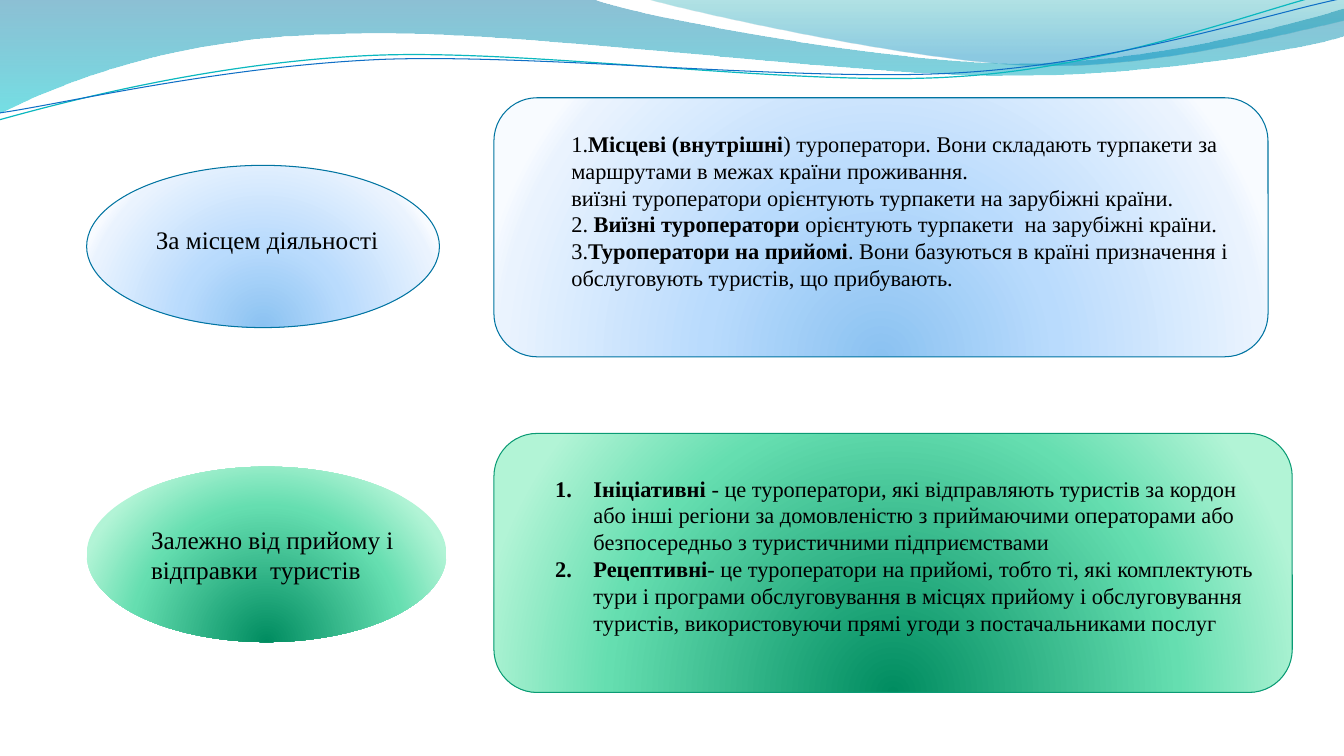
from math import cos, radians, sin

from lxml import etree
from pptx import Presentation
from pptx.dml.color import RGBColor as RGB
from pptx.enum.shapes import MSO_SHAPE as SHAPE
from pptx.enum.text import MSO_ANCHOR as ANCHOR, MSO_AUTO_SIZE as AUTO, PP_ALIGN as ALIGN
from pptx.oxml.ns import qn
from pptx.util import Emu, Pt

PX = 9144  # 100 px to the inch
SLIDE_SIZE = (Emu(12192000), Emu(6858000))

# Theme: gradient stops are (position %, colour, opacity %)
THEME = {
    "font": "Times New Roman", "text": "000000", "label": 18, "body": 16,
    "wave": [(0, "0074A1", 45), (100, "00C6CF", 55)],
    "crest": [(0, "00A1A9", 30), (80, "008BBF", 45)],
    "blue": [(0, "8BC2F1", 100), (43, "B9DBFD", 100), (93, "EAF3FE", 100), (100, "F8FBFF", 100)],
    "green": [(0, "008C60", 100), (68, "65DEB0", 100), (100, "B2F4D6", 100)],
    "teal line": ("0AB8BF", 0.85), "blue line": ("0F6FC6", 0.75),
    "blue edge": ("0074A1", 0.75), "green edge": ("0A9B74", 0.75),
}

# Header outlines: fill, edge, tilt in degrees, turning centre, steps
# (a pair is a straight step, three pairs are a Bézier step)
WAVES = [
    ("wave", None, 0, (667, 56), [
        [(-1, 0)], [(587, -1)], [(634, 17), (885, 63), (1011, 63)],
        [(1138, 63), (1278, 26), (1333, 9)], [(1335, 36)],
        [(1311, 44), (1160, 76), (994, 75)], [(829, 75), (509, 28), (343, 34)],
        [(172, 36), (61, 83), (-1, 113)]]),
    ("crest", None, 0, (986, 34), [
        [(639, -1)], [(679, 11), (909, 62), (1025, 65)],
        [(1141, 69), (1282, 32), (1333, 21)], [(1333, 0)]]),
    (None, "teal line", -2.7, (665, 57), [
        [(-1, 119)], [(64, 101), (211, 62), (369, 55)],
        [(527, 48), (790, 87), (950, 76)], [(1110, 66), (1252, 8), (1331, -10)]]),
    (None, "blue line", -2.7, (667, 59), [
        [(0, 112)], [(63, 103), (218, 66), (378, 59)],
        [(537, 53), (796, 82), (955, 72)], [(1115, 62), (1255, 14), (1334, -2)]]),
]

# Panels: shape, box, fill, edge, text box, type size, alignment, numbered, paragraphs of (text, bold)
PANELS = [
    (SHAPE.OVAL, (86, 164, 350, 161), "blue", "blue edge",
     (140, 218, 250, 40), "label", ALIGN.CENTER, False,
     [[("За місцем діяльності", False)]]),
    (SHAPE.ROUNDED_RECTANGLE, (490, 97, 768, 257), "blue", "blue edge",
     (557, 124, 691, 202), "body", ALIGN.LEFT, False, [
        [("1.", False), ("Місцеві (внутрішні", True),
         (") туроператори. Вони складають турпакети за маршрутами в межах країни проживання.", False)],
        [("виїзні туроператори орієнтують турпакети на зарубіжні країни.", False)],
        [("2. ", False), ("Виїзні туроператори ", True),
         ("орієнтують турпакети  на зарубіжні країни.", False)],
        [("3.", False), ("Туроператори на прийомі", True),
         (". Вони базуються в країні призначення і обслуговують туристів, що прибувають.", False)]]),
    (SHAPE.OVAL, (86, 463, 357, 174), "green", None,
     (140, 515, 282, 71), "label", ALIGN.LEFT, False,
     [[("Залежно від прийому і відправки  туристів", False)]]),
    (SHAPE.ROUNDED_RECTANGLE, (490, 430, 792, 257), "green", "green edge",
     (541, 466, 717, 172), "body", ALIGN.LEFT, True, [
        [("Ініціативні", True),
         (" - це туроператори, які відправляють туристів за кордон або інші регіони за "
          "домовленістю з приймаючими операторами або безпосередньо з туристичними "
          "підприємствами", False)],
        [("Рецептивні", True),
         ("- це туроператори на прийомі, тобто ті, які комплектують тури і програми "
          "обслуговування в місцях прийому і обслуговування туристів, використовуючи прямі "
          "угоди з постачальниками послуг", False)]]),
]
NUMBER_INDENT = 38


def add_xml(parent, tag, **attrs):
    return etree.SubElement(parent, qn(tag), {k: str(v) for k, v in attrs.items()})


def emu(box):
    return [Emu(v * PX) for v in box]


def add_wave(slide, tilt, centre, steps, closed):
    """Lay the points out level, join them with Bézier steps, then tilt the shape."""
    c, s = cos(radians(tilt)), sin(radians(tilt))

    def level(point):
        dx, dy = point[0] - centre[0], point[1] - centre[1]
        return (round((centre[0] + dx * c + dy * s) * PX),
                round((centre[1] - dx * s + dy * c) * PX))

    points = [level(point) for step in steps for point in step]
    outline = slide.shapes.build_freeform(*points[0])
    outline.add_line_segments(points[1:], close=closed)
    sp = outline.convert_to_shape()
    lines = iter(list(sp._element.iter(qn("a:lnTo"))))
    for step in steps[1:]:
        parts = [next(lines) for _ in step]
        if len(parts) == 3:
            curve = etree.Element(qn("a:cubicBezTo"))
            parts[0].addprevious(curve)
            for part in parts:
                curve.append(part[0])
                part.getparent().remove(part)
    sp.rotation = tilt
    return sp


def paint(sp, fill, edge, radial):
    sp.shadow.inherit = False
    if fill:
        sp.fill.gradient()
        grad = sp.fill._xPr.find(qn("a:gradFill"))
        for child in list(grad):
            grad.remove(child)
        stops = add_xml(grad, "a:gsLst")
        for pos, colour, opacity in THEME[fill]:
            stop = add_xml(stops, "a:gs", pos=pos * 1000)
            clr = add_xml(stop, "a:srgbClr", val=colour)
            if opacity < 100:
                add_xml(clr, "a:alpha", val=opacity * 1000)
        if radial:
            focus = add_xml(grad, "a:path", path="circle")
            add_xml(focus, "a:fillToRect", l=50000, t=130000, r=50000, b=-30000)
        else:
            add_xml(grad, "a:lin", ang=90 * 60000, scaled=0)
    else:
        sp.fill.background()
    if edge:
        colour, width = THEME[edge]
        sp.line.color.rgb = RGB.from_string(colour)
        sp.line.width = Pt(width)
    else:
        sp.line.fill.background()


def write(slide, box, size, align, numbered, paragraphs):
    tf = slide.shapes.add_textbox(*emu(box)).text_frame
    frame = {"word_wrap": True, "auto_size": AUTO.SHAPE_TO_FIT_TEXT, "vertical_anchor": ANCHOR.TOP}
    for name, value in frame.items():
        setattr(tf, name, value)
    for i, runs in enumerate(paragraphs):
        p = tf.paragraphs[0] if i == 0 else tf.add_paragraph()
        p.alignment = align
        if numbered:
            pPr = p._p.get_or_add_pPr()
            pPr.set("marL", str(NUMBER_INDENT * PX))
            pPr.set("indent", str(-NUMBER_INDENT * PX))
            add_xml(pPr, "a:buFont", typeface=THEME["font"])
            add_xml(pPr, "a:buAutoNum", type="arabicPeriod")
        for text, bold in runs:
            r = p.add_run()
            r.text = text
            style = {"name": THEME["font"], "size": Pt(THEME[size]), "bold": bold}
            for name, value in style.items():
                setattr(r.font, name, value)
            r.font.color.rgb = RGB.from_string(THEME["text"])


def main():
    prs = Presentation()
    prs.slide_width, prs.slide_height = SLIDE_SIZE
    slide = prs.slides.add_slide(prs.slide_layouts[6])

    # Header waves and lines
    for fill, edge, tilt, centre, steps in WAVES:
        wave = add_wave(slide, tilt, centre, steps, closed=bool(fill))
        paint(wave, fill, edge, radial=False)

    # Ovals and panels with their text
    for kind, box, fill, edge, *text in PANELS:
        paint(slide.shapes.add_shape(kind, *emu(box)), fill, edge, radial=True)
        write(slide, *text)

    prs.save("out.pptx")


if __name__ == "__main__":
    main()
